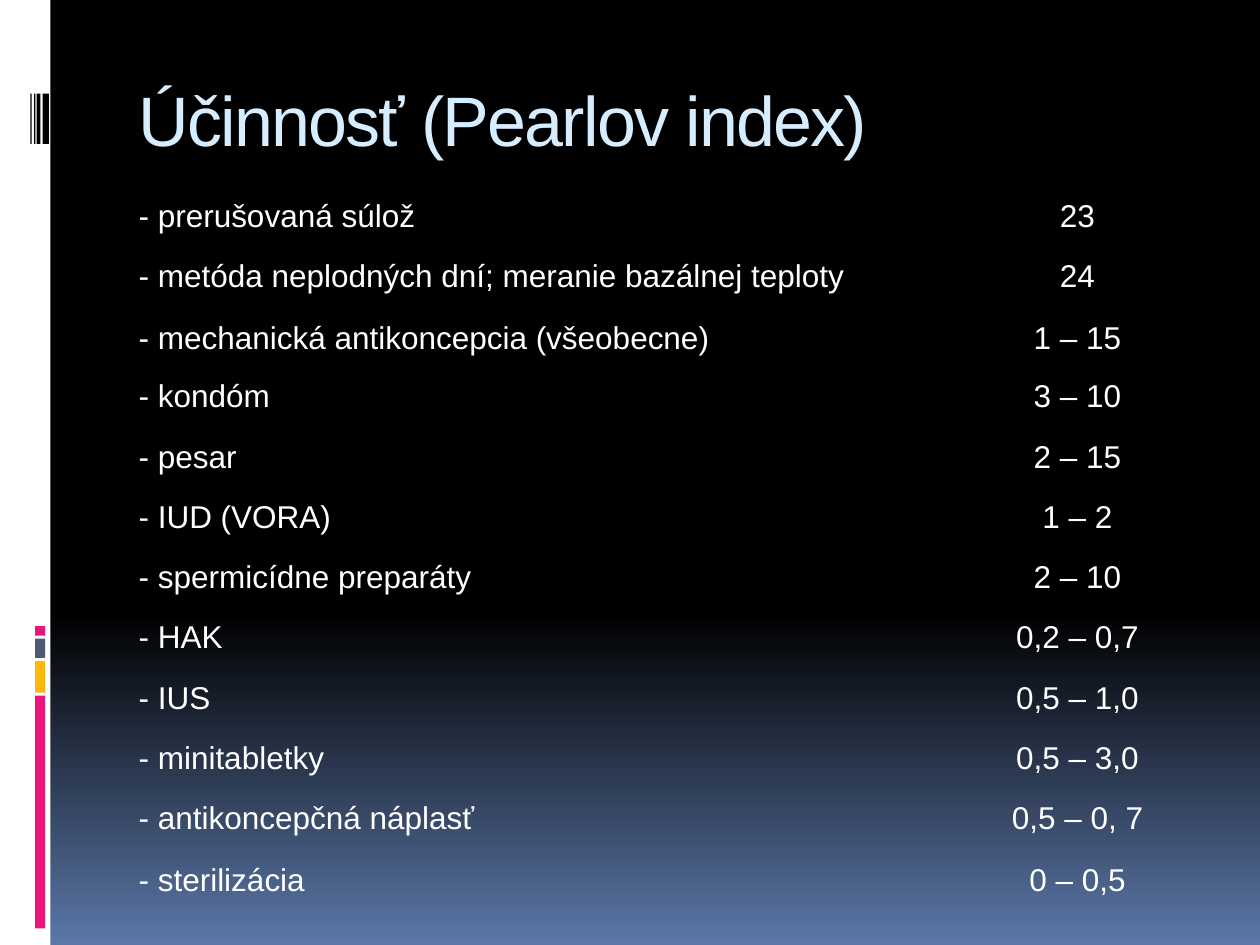
from dataclasses import dataclass

from pptx import Presentation
from pptx.dml.color import RGBColor as Rgb
from pptx.enum.shapes import MSO_SHAPE as Preset
from pptx.enum.text import MSO_ANCHOR as Anchor, PP_ALIGN as Align
from pptx.oxml.ns import qn
from pptx.util import Pt


@dataclass(frozen=True)
class Theme:
    font: str = "Arial"
    title_size: int = 40
    body_size: int = 18
    black: str = "000000"
    white: str = "FFFFFF"
    sky: str = "5B77A8"
    title: str = "D6ECFF"
    pink: str = "EA157A"
    amber: str = "FEB80A"
    slate: str = "4E5B6F"


THEME = Theme()
NO_GRID = "{2D5ABB26-0587-4C30-8999-92F81FD0307C}"
ROW_HEIGHT = 33.1
MIDDLE_ROWS = {2, 11}

METHODS = [
    ("- prerušovaná súlož", "23 "),
    ("- metóda neplodných dní; meranie bazálnej teploty", "24 "),
    ("- mechanická antikoncepcia (všeobecne)", "1 – 15 "),
    ("- kondóm", "3 – 10 "),
    ("- pesar", "2 – 15 "),
    ("- IUD (VORA)", "1 – 2 "),
    ("- spermicídne preparáty", "2 – 10 "),
    ("- HAK", "0,2 – 0,7 "),
    ("- IUS", "0,5 – 1,0 "),
    ("- minitabletky", "0,5 – 3,0 "),
    ("- antikoncepčná náplasť", "0,5 – 0, 7 "),
    ("- sterilizácia", "0 – 0,5 "),
]

ACCENTS = [
    (397.5, 133, THEME.pink),
    (377.8, 18, THEME.amber),
    (365, 11, THEME.slate),
    (357.8, 5.5, THEME.pink),
]
BARCODE = [(24.4, 3.6), (20.9, 2.2), (19.5, 0.7), (17.4, 0.7)]


def write(frame, text, size, color, align=Align.LEFT, line=None, after=None,
          tracking=None):
    paragraph = frame.paragraphs[0]
    paragraph.alignment = align
    if line:
        paragraph.line_spacing = line
    if after:
        paragraph.space_after = Pt(after)
    run = paragraph.add_run()
    run.text = text
    run.font.name = THEME.font
    run.font.size = Pt(size)
    run.font.color.rgb = Rgb.from_string(color)
    if tracking:
        run.font._element.set("spc", str(tracking * 100))


class Canvas:
    def __init__(self, slide, theme):
        self.slide = slide
        self.theme = theme

    def background(self):
        fill = self.slide.background.fill
        fill.gradient()
        fill.gradient_angle = 270
        dark, light = fill.gradient_stops
        dark.color.rgb = Rgb.from_string(self.theme.black)
        dark.position = 0.65
        light.color.rgb = Rgb.from_string(self.theme.sky)
        light.position = 1

    def bar(self, left, top, width, height, color):
        bar = self.slide.shapes.add_shape(
            Preset.RECTANGLE, Pt(left), Pt(top), Pt(width), Pt(height))
        bar.shadow.inherit = False
        bar.fill.solid()
        bar.fill.fore_color.rgb = Rgb.from_string(color)
        bar.line.fill.background()

    def title(self, text, left, top, width, height):
        frame = self.slide.shapes.add_textbox(
            Pt(left), Pt(top), Pt(width), Pt(height)).text_frame
        frame.word_wrap = True
        write(frame, text, self.theme.title_size, self.theme.title, tracking=-1)

    def table(self, rows, left, top, widths, row_height):
        table = self.slide.shapes.add_table(
            len(rows), len(widths), Pt(left), Pt(top),
            Pt(sum(widths)), Pt(row_height * len(rows))).table
        table.first_row = table.horz_banding = False
        next(table._tbl.iter(qn("a:tableStyleId"))).text = NO_GRID
        for column, width in zip(table.columns, widths):
            column.width = Pt(width)
        for index, (method, rate) in enumerate(rows):
            table.rows[index].height = Pt(row_height)
            anchor = Anchor.MIDDLE if index in MIDDLE_ROWS else Anchor.TOP
            self.cell(table.cell(index, 0), method, anchor)
            self.cell(table.cell(index, 1), rate, anchor, align=Align.CENTER)

    def cell(self, cell, text, anchor, **style):
        cell.fill.background()
        cell.vertical_anchor = anchor
        cell.margin_left = cell.margin_right = Pt(1)
        cell.margin_top = cell.margin_bottom = Pt(1)
        write(cell.text_frame, text, self.theme.body_size, self.theme.white,
              line=1.5, after=10, **style)


def main():
    deck = Presentation()
    deck.slide_width, deck.slide_height = Pt(720), Pt(540)
    canvas = Canvas(deck.slides.add_slide(deck.slide_layouts[6]), THEME)
    canvas.background()
    canvas.bar(0, 0, 28.8, 540, THEME.white)
    for top, height, color in ACCENTS:
        canvas.bar(20, top, 5.8, height, color)
    for left, width in BARCODE:
        canvas.bar(left, 53.5, width, 28.8, THEME.black)
    canvas.title("Účinnosť (Pearlov index)", 72, 40.3, 612, 72)
    canvas.table(METHODS, 78.2, 102.5, [474, 132], ROW_HEIGHT)
    deck.save("out.pptx")


if __name__ == "__main__":
    main()
